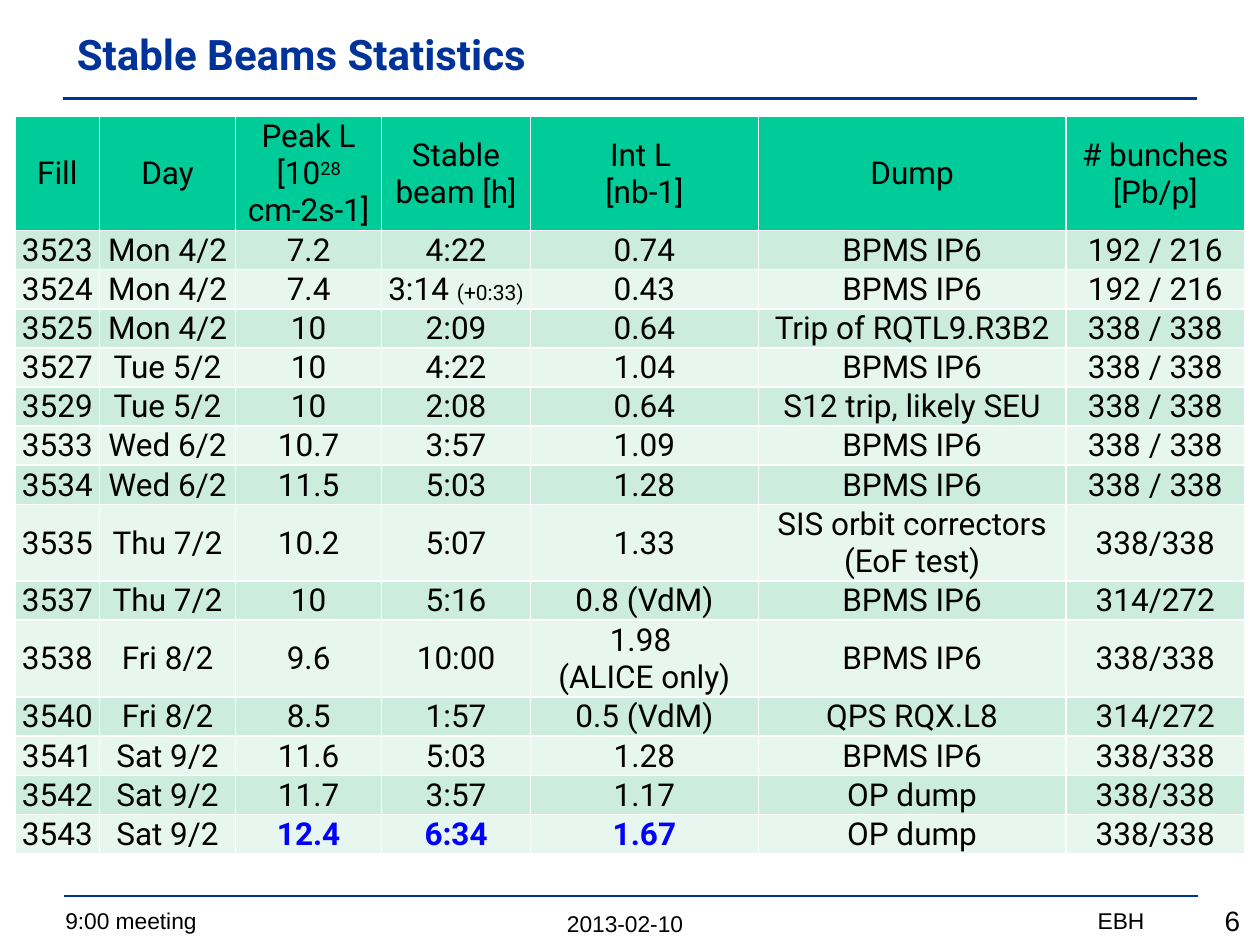
import pptx
import pptx.dml.color
import pptx.enum.shapes
import pptx.enum.text
import pptx.util
import pptx.oxml.ns
import lxml.etree

Inches = pptx.util.Inches
ALIGN = pptx.enum.text.PP_ALIGN
MIDDLE = pptx.enum.text.MSO_ANCHOR.MIDDLE

COLORS = {
    "navy": "003399",
    "black": "000000",
    "record": "0000FF",
    "header": "00CC99",
    "odd": "CCECDE",
    "even": "E7F6EF",
}


def add_span(para, text, size=18, font="Roboto", color="black", bold=False):
    span = para.add_run()
    span.text = text
    span.font.size = pptx.util.Pt(size)
    span.font.name = font
    span.font.bold = bold
    span.font.color.rgb = pptx.dml.color.RGBColor.from_string(COLORS[color])
    return span


deck = pptx.Presentation()
deck.slide_width = Inches(10)
deck.slide_height = Inches(7.5)
page = deck.slides.add_slide(deck.slide_layouts[5])

title = page.shapes.title
title.left, title.top = Inches(0.51), Inches(0.09)
title.width, title.height = Inches(8.99), Inches(0.68)
title.text_frame.vertical_anchor = MIDDLE
title.text_frame.auto_size = pptx.enum.text.MSO_AUTO_SIZE.NONE
title_para = title.text_frame.paragraphs[0]
title_para.alignment = ALIGN.LEFT
add_span(title_para, "Stable Beams Statistics", 24, color="navy", bold=True)

for left, top in [(0.5, 0.78), (0.51, 7.11)]:
    rule = page.shapes.add_connector(
        pptx.enum.shapes.MSO_CONNECTOR.STRAIGHT,
        Inches(left), Inches(top), Inches(left + 9), Inches(top))
    rule.line.color.rgb = pptx.dml.color.RGBColor.from_string(COLORS["navy"])
    rule.line.width = pptx.util.Pt(1.5)
    lxml.etree.SubElement(rule._element.spPr, pptx.oxml.ns.qn("a:effectLst"))

footers = [
    ("9:00 meeting", 0.42, 7.15, 3.7, 0.32, 13, ALIGN.LEFT),
    ("2013-02-10", 2.42, 7.17, 5.08, 0.32, 13, ALIGN.CENTER),
    ("EBH", 6.26, 7.15, 2.92, 0.32, 13, ALIGN.RIGHT),
    ("6", 8.79, 7.12, 1.15, 0.37, 16, ALIGN.RIGHT),
]
for text, left, top, width, height, size, alignment in footers:
    box = page.shapes.add_textbox(Inches(left), Inches(top), Inches(width), Inches(height))
    box.text_frame.word_wrap = True
    para = box.text_frame.paragraphs[0]
    para.alignment = alignment
    add_span(para, text, size, "Arial")

column_widths = [0.67, 1.08, 1.16, 1.18, 1.81, 2.44, 1.42]
rows = [
    ["Fill", "Day", "Peak L\v[10", "Stable beam [h]", "Int L \v[nb-1]", "Dump", "# bunches\n[Pb/p]"],
    ["3523", "Mon 4/2", "7.2", "4:22", "0.74", "BPMS IP6", "192 / 216"],
    ["3524", "Mon 4/2", "7.4", "3:14 ", "0.43", "BPMS IP6", "192 / 216"],
    ["3525", "Mon 4/2", "10", "2:09", "0.64", "Trip of RQTL9.R3B2", "338 / 338"],
    ["3527", "Tue 5/2", "10", "4:22", "1.04", "BPMS IP6", "338 / 338"],
    ["3529", "Tue 5/2", "10", "2:08", "0.64", "S12 trip, likely SEU", "338 / 338"],
    ["3533", "Wed 6/2", "10.7", "3:57", "1.09", "BPMS IP6", "338 / 338"],
    ["3534", "Wed 6/2", "11.5", "5:03", "1.28", "BPMS IP6", "338 / 338"],
    ["3535", "Thu 7/2", "10.2", "5:07", "1.33", "SIS orbit correctors (EoF test)", "338/338"],
    ["3537", "Thu 7/2", "10", "5:16", "0.8 (VdM)", "BPMS IP6", "314/272"],
    ["3538", "Fri 8/2", "9.6", "10:00", "1.98 \n(ALICE only)", "BPMS IP6", "338/338"],
    ["3540", "Fri 8/2", "8.5", "1:57", "0.5 (VdM)", "QPS RQX.L8", "314/272"],
    ["3541", "Sat 9/2", "11.6", "5:03", "1.28", "BPMS IP6", "338/338"],
    ["3542", "Sat 9/2", "11.7", "3:57", "1.17", "OP dump", "338/338"],
    ["3543", "Sat 9/2", "12.4", "6:34", "1.67", "OP dump", "338/338"],
]
row_heights = [0.41] + [0.31] * (len(rows) - 1)

table = page.shapes.add_table(
    len(rows), len(column_widths), Inches(0.12), Inches(0.92),
    Inches(sum(column_widths)), Inches(sum(row_heights))).table
for column, width in zip(table.columns, column_widths):
    column.width = Inches(width)

for row_index, values in enumerate(rows):
    table.rows[row_index].height = Inches(row_heights[row_index])
    band = "header" if row_index == 0 else ("even", "odd")[row_index % 2]
    for column_index, value in enumerate(values):
        cell = table.cell(row_index, column_index)
        cell.fill.solid()
        cell.fill.fore_color.rgb = pptx.dml.color.RGBColor.from_string(COLORS[band])
        cell.vertical_anchor = MIDDLE
        cell.margin_left = cell.margin_top = cell.margin_right = Inches(0.01)
        cell.margin_bottom = 0
        record = row_index == len(rows) - 1 and column_index in (2, 3, 4)
        for para_index, para_text in enumerate(value.split("\n")):
            frame = cell.text_frame
            para = frame.add_paragraph() if para_index else frame.paragraphs[0]
            para.alignment = ALIGN.CENTER
            for line_index, line in enumerate(para_text.split("\v")):
                if line_index:
                    para.add_line_break()
                add_span(para, line, color="record" if record else "black", bold=record)

peak_para = table.cell(0, 2).text_frame.paragraphs[0]
exponent = add_span(peak_para, "28 ")
exponent._r.get_or_add_rPr().set("baseline", "30000")
add_span(peak_para, "cm-2s-1]")
add_span(table.cell(2, 3).text_frame.paragraphs[0], "(+0:33)", 12)

deck.save("out.pptx")
